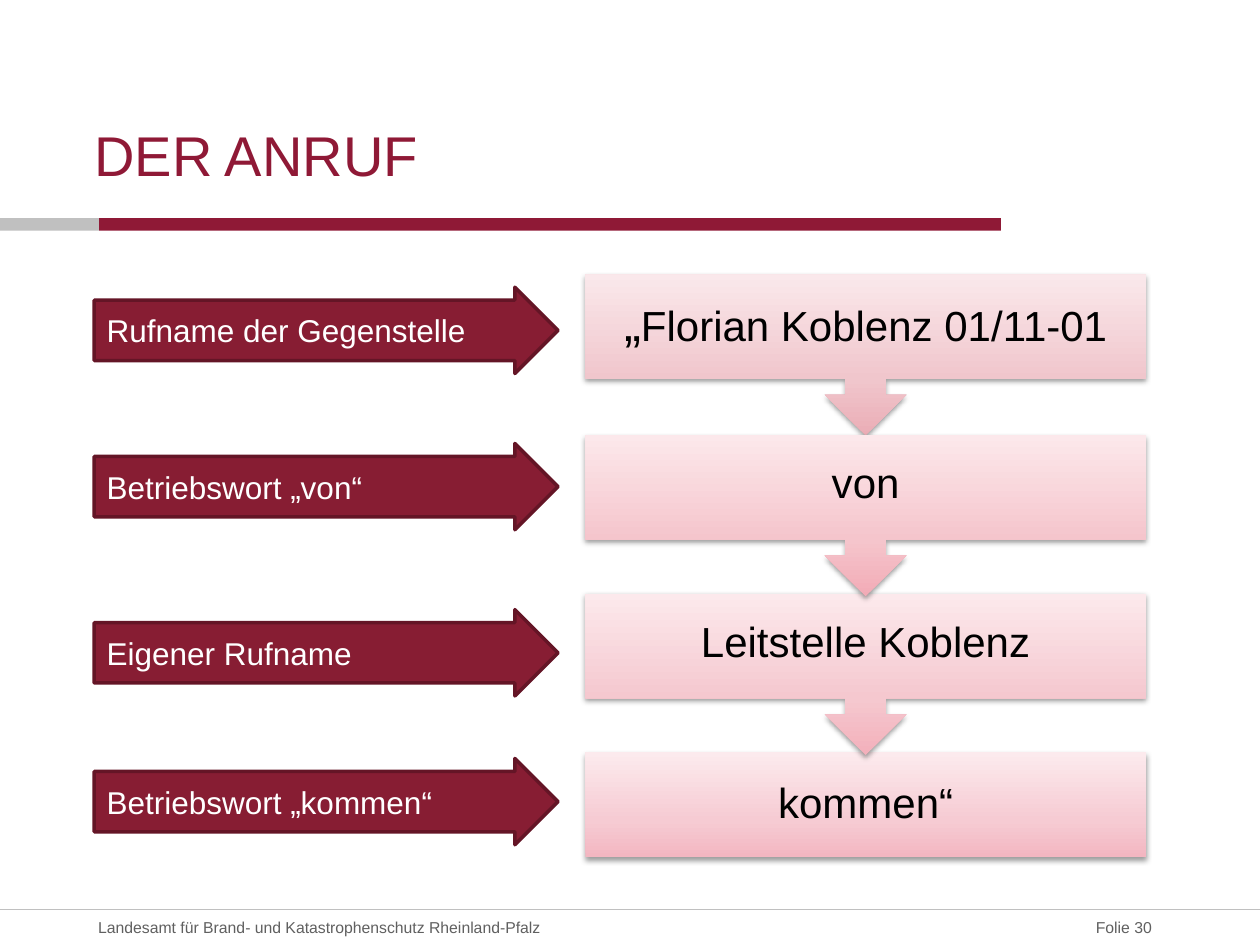
import pptx
import pptx.util
import pptx.dml.color
import pptx.enum.shapes
import pptx.enum.text
import pptx.oxml
import pptx.oxml.ns

Cm, Pt = pptx.util.Cm, pptx.util.Pt
KIND = pptx.enum.shapes.MSO_SHAPE
ALIGN = pptx.enum.text.PP_ALIGN
ANCHOR = pptx.enum.text.MSO_ANCHOR

TITLE = "DER ANRUF"
FOOTER = "Landesamt für Brand- und Katastrophenschutz Rheinland-Pfalz"
NUMBER = "Folie 30"
RED, GREY, TEXT = "8F1936", "C0C0C0", "606060"

LABELS = [
    ("Rufname der Gegenstelle", 5.79),
    ("Betriebswort „von“", 8.94),
    ("Eigener Rufname", 12.29),
    ("Betriebswort „kommen“", 15.29),
]
STEPS = [
    (["kommen“"], 15.17, False, ("F3B6C1", "F6CBD3", "FCEAED")),
    (["Leitstelle Koblenz"], 11.97, True, ("F3B0BB", "F5C8CF", "FCE9EC")),
    (["„", "Florian Koblenz 01/11-01"], 5.53, True, ("EBADB6", "F0C6CC", "FAE8EB")),
    (["von"], 8.77, True, ("F2ABB6", "F5C5CC", "FCE8EB")),
]
LEFT, WIDTH, HIGH, TIP = 11.8, 11.3, 2.11, 3.25
SHAFT, HEAD, NECK = 0.41, 0.82, 2.43
NS = pptx.oxml.ns.nsdecls("a")


def color(code):
    return pptx.dml.color.RGBColor.from_string(code)


def style(para, size, code, align=ALIGN.LEFT):
    para.alignment = align
    para.font.name = "Arial"
    para.font.size = Pt(size)
    para.font.color.rgb = color(code)


def inset(frame, left, top, right, bottom):
    frame.margin_left, frame.margin_top = Cm(left), Cm(top)
    frame.margin_right, frame.margin_bottom = Cm(right), Cm(bottom)
    frame.word_wrap = True


def block(slide, kind, box, code):
    shape = slide.shapes.add_shape(kind, *map(Cm, box))
    shape.shadow.inherit = False
    shape.fill.solid()
    shape.fill.fore_color.rgb = color(code)
    shape.line.fill.background()
    return shape


def note(slide, text, left, width, align):
    frame = slide.shapes.add_textbox(Cm(left), Cm(18.34), Cm(width), Cm(0.71)).text_frame
    inset(frame, 0, 0, 0, 0)
    frame.vertical_anchor = ANCHOR.MIDDLE
    frame.text = text
    style(frame.paragraphs[0], 9, TEXT, align)


def label(slide, text, top):
    shape = block(slide, KIND.RIGHT_ARROW, (1.9, top, 9.35, 1.74), "871D33")
    shape.adjustments[0], shape.adjustments[1] = 0.7, 0.5
    shape.line.color.rgb = color("641526")
    shape.line.width = Pt(2)
    frame = shape.text_frame
    frame.vertical_anchor = ANCHOR.MIDDLE
    inset(frame, 0.25, 0.13, 0.25, 0.13)
    frame.text = text
    style(frame.paragraphs[0], 18, "FFFFFF")


def outline(top, arrow):
    right, mid, base = LEFT + WIDTH, LEFT + WIDTH / 2, top + HIGH
    yield from [(LEFT, top), (right, top), (right, base)]
    if arrow:
        neck = top + NECK
        yield from [(mid + SHAFT, base), (mid + SHAFT, neck), (mid + HEAD, neck)]
        yield (mid, top + TIP)
        yield from [(mid - HEAD, neck), (mid - SHAFT, neck), (mid - SHAFT, base)]
    yield (LEFT, base)


def shade(shape, codes):
    shape.fill.gradient()
    shape.fill.gradient_angle = 90
    stops = "".join(
        f'<a:gs pos="{pos}"><a:srgbClr val="{code}"/></a:gs>'
        for pos, code in zip((0, 35000, 100000), codes)
    )
    old = shape.element.spPr.find(".//" + pptx.oxml.ns.qn("a:gsLst"))
    old.getparent().replace(old, pptx.oxml.parse_xml(f"<a:gsLst {NS}>{stops}</a:gsLst>"))
    shape.line.fill.background()
    shape.shadow.inherit = False
    shape.element.spPr.find(pptx.oxml.ns.qn("a:effectLst")).append(pptx.oxml.parse_xml(
        f'<a:outerShdw {NS} blurRad="40000" dist="20000" dir="5400000" rotWithShape="0">'
        '<a:srgbClr val="000000"><a:alpha val="38000"/></a:srgbClr></a:outerShdw>'
    ))


def step(slide, parts, top, arrow, codes):
    first, *rest = [(Cm(x), Cm(y)) for x, y in outline(top, arrow)]
    form = slide.shapes.build_freeform(*first)
    form.add_line_segments(rest, close=True)
    shape = form.convert_to_shape()
    shade(shape, codes)
    frame = shape.text_frame
    inset(frame, 0.58, 0.58, 0.58, 1.8 if arrow else 0.58)
    frame.vertical_anchor = ANCHOR.MIDDLE
    para = frame.paragraphs[0]
    for part in parts:
        para.add_run().text = part
    style(para, 24, "000000", ALIGN.CENTER)
    para.line_spacing = 0.9
    if len(parts) > 1:
        para.runs[0].font.size = Pt(29)


def main():
    deck = pptx.Presentation()
    deck.slide_width, deck.slide_height = Cm(25.4), Cm(19.05)
    slide = deck.slides.add_slide(deck.slide_layouts[5])

    title = slide.shapes.title
    title.left, title.top, title.width, title.height = map(Cm, (1.9, 1.22, 16.23, 2.57))
    title.text = TITLE
    inset(title.text_frame, 0, 0, 0, 0)
    title.text_frame.vertical_anchor = ANCHOR.BOTTOM
    style(title.text_frame.paragraphs[0], 32, RED)

    block(slide, KIND.RECTANGLE, (0, 4.4, 2, 0.25), GREY)
    block(slide, KIND.RECTANGLE, (2, 4.4, 18.18, 0.25), RED)
    rule = slide.shapes.add_connector(
        pptx.enum.shapes.MSO_CONNECTOR.STRAIGHT, 0, Cm(18.34), deck.slide_width, Cm(18.34))
    rule.line.color.rgb = color(GREY)
    rule.line.width = Pt(0.75)
    rule.element.spPr.append(pptx.oxml.parse_xml(f"<a:effectLst {NS}/>"))
    note(slide, NUMBER, 20.17, 3.05, ALIGN.RIGHT)
    note(slide, FOOTER, 1.98, 14, ALIGN.LEFT)

    for item in STEPS:
        step(slide, *item)
    for item in LABELS:
        label(slide, *item)
    deck.save("out.pptx")


if __name__ == "__main__":
    main()
